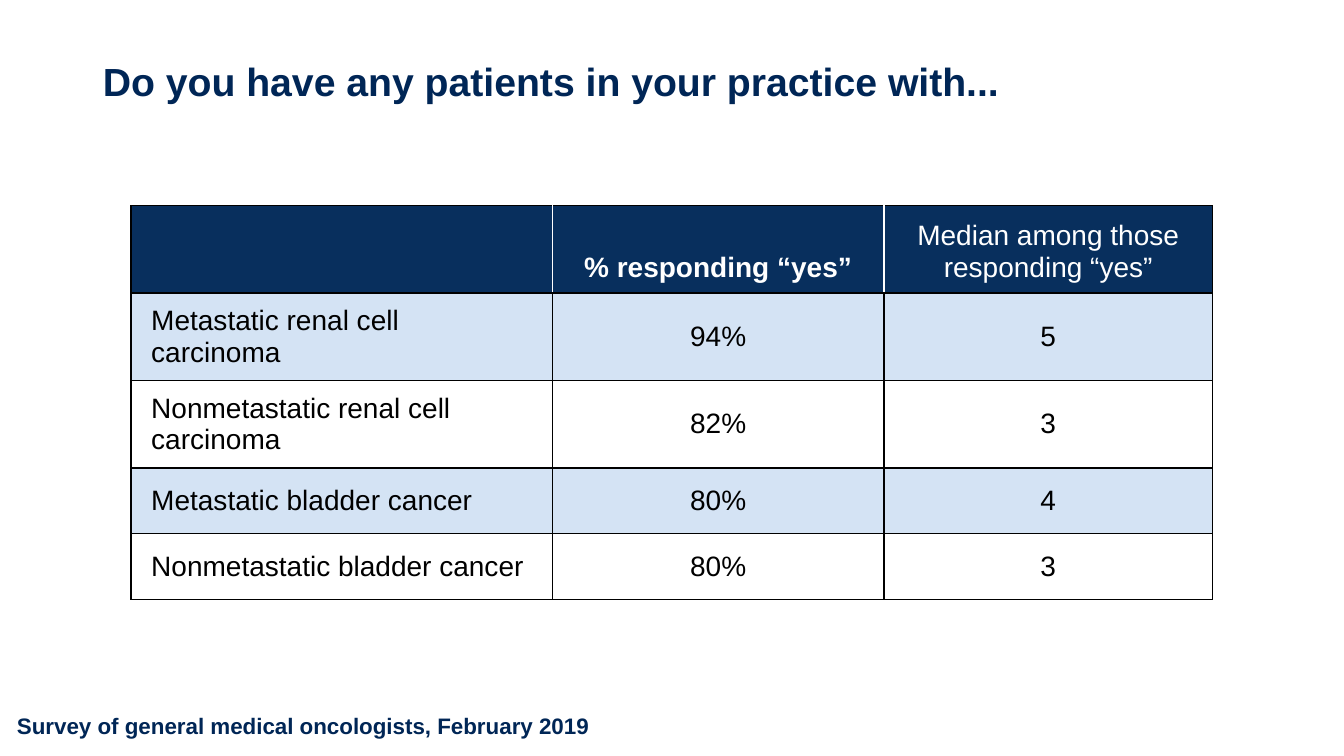
from lxml import etree
from pptx import Presentation
from pptx.dml.color import RGBColor
from pptx.enum.text import MSO_ANCHOR, MSO_AUTO_SIZE, PP_ALIGN
from pptx.oxml.ns import qn
from pptx.util import Pt

LEFT, CENTER = PP_ALIGN.LEFT, PP_ALIGN.CENTER
MIDDLE, BOTTOM = MSO_ANCHOR.MIDDLE, MSO_ANCHOR.BOTTOM
FIT_SHAPE = MSO_AUTO_SIZE.SHAPE_TO_FIT_TEXT

NAVY = RGBColor(0x00, 0x26, 0x56)
HEADER_BLUE = RGBColor(0x08, 0x2F, 0x5D)
PALE_BLUE = RGBColor(0xD4, 0xE3, 0xF4)
WHITE = RGBColor(0xFF, 0xFF, 0xFF)
BLACK = RGBColor(0x00, 0x00, 0x00)

FONT = "Arial"
COLUMN_WIDTHS = (300.96, 236.88, 234.72)
ROW_HEIGHTS = (60.3, 60.3, 60.3, 47, 47)
ROWS = (
    ("", "% responding “yes”", "Median among those\nresponding “yes”"),
    ("Metastatic renal cell carcinoma", "94%", "5"),
    ("Nonmetastatic renal cell carcinoma", "82%", "3"),
    ("Metastatic bladder cancer", "80%", "4"),
    ("Nonmetastatic bladder cancer", "80%", "3"),
)


def write_text(frame, text, size, color, bold=False, align=LEFT):
    frame.text = text
    for para in frame.paragraphs:
        para.alignment = align
        para.font.name = FONT
        para.font.size = Pt(size)
        para.font.bold = bold
        para.font.color.rgb = color


def set_borders(cell, left, right, top, bottom):
    properties = cell._tc.get_or_add_tcPr()
    sides = (("a:lnL", left), ("a:lnR", right), ("a:lnT", top), ("a:lnB", bottom))
    for index, (tag, color) in enumerate(sides):
        line = etree.Element(qn(tag), w=str(Pt(1)))
        fill = etree.SubElement(line, qn("a:solidFill"))
        etree.SubElement(fill, qn("a:srgbClr"), val=str(color))
        properties.insert(index, line)


def add_title(page, text):
    title = page.shapes.title
    title.left, title.top = Pt(66.24), Pt(0)
    title.width, title.height = Pt(828), Pt(119.52)
    frame = title.text_frame
    frame.vertical_anchor = MIDDLE
    write_text(frame, text, 28, NAVY, bold=True)
    frame.paragraphs[0].line_spacing = 0.9


def add_source_note(page, text):
    box = page.shapes.add_textbox(Pt(5.04), Pt(505.44), Pt(486.72), Pt(26.64))
    box.text_frame.word_wrap = True
    box.text_frame.auto_size = FIT_SHAPE
    write_text(box.text_frame, text, 16, NAVY, bold=True)


def format_cell(cell, text, row, column):
    header = row == 0
    cell.margin_left = cell.margin_right = Pt(14.4)
    cell.margin_top = cell.margin_bottom = Pt(7.2)
    cell.vertical_anchor = BOTTOM if header else MIDDLE
    write_text(
        cell.text_frame, text, 20,
        color=WHITE if header else BLACK,
        bold=header and column == 1,
        align=CENTER if column else LEFT,
    )
    cell.fill.solid()
    band = PALE_BLUE if row % 2 else WHITE
    cell.fill.fore_color.rgb = HEADER_BLUE if header else band
    last = len(COLUMN_WIDTHS) - 1
    left = WHITE if header and column > 0 else BLACK
    right = WHITE if header and column < last else BLACK
    set_borders(cell, left, right, BLACK, BLACK)


def add_survey_table(page):
    table = page.shapes.add_table(
        len(ROWS), len(COLUMN_WIDTHS), Pt(93.6), Pt(146.88),
        Pt(sum(COLUMN_WIDTHS)), Pt(sum(ROW_HEIGHTS)),
    ).table
    for column, width in zip(table.columns, COLUMN_WIDTHS):
        column.width = Pt(width)
    for row, (height, texts) in enumerate(zip(ROW_HEIGHTS, ROWS)):
        table.rows[row].height = Pt(height)
        for column, text in enumerate(texts):
            format_cell(table.cell(row, column), text, row, column)


def main():
    deck = Presentation()
    deck.slide_width, deck.slide_height = Pt(960), Pt(540)
    page = deck.slides.add_slide(deck.slide_layouts[5])
    add_source_note(page, "Survey of general medical oncologists, February 2019")
    add_title(page, "Do you have any patients in your practice with...")
    add_survey_table(page)
    deck.save("out.pptx")


if __name__ == "__main__":
    main()
